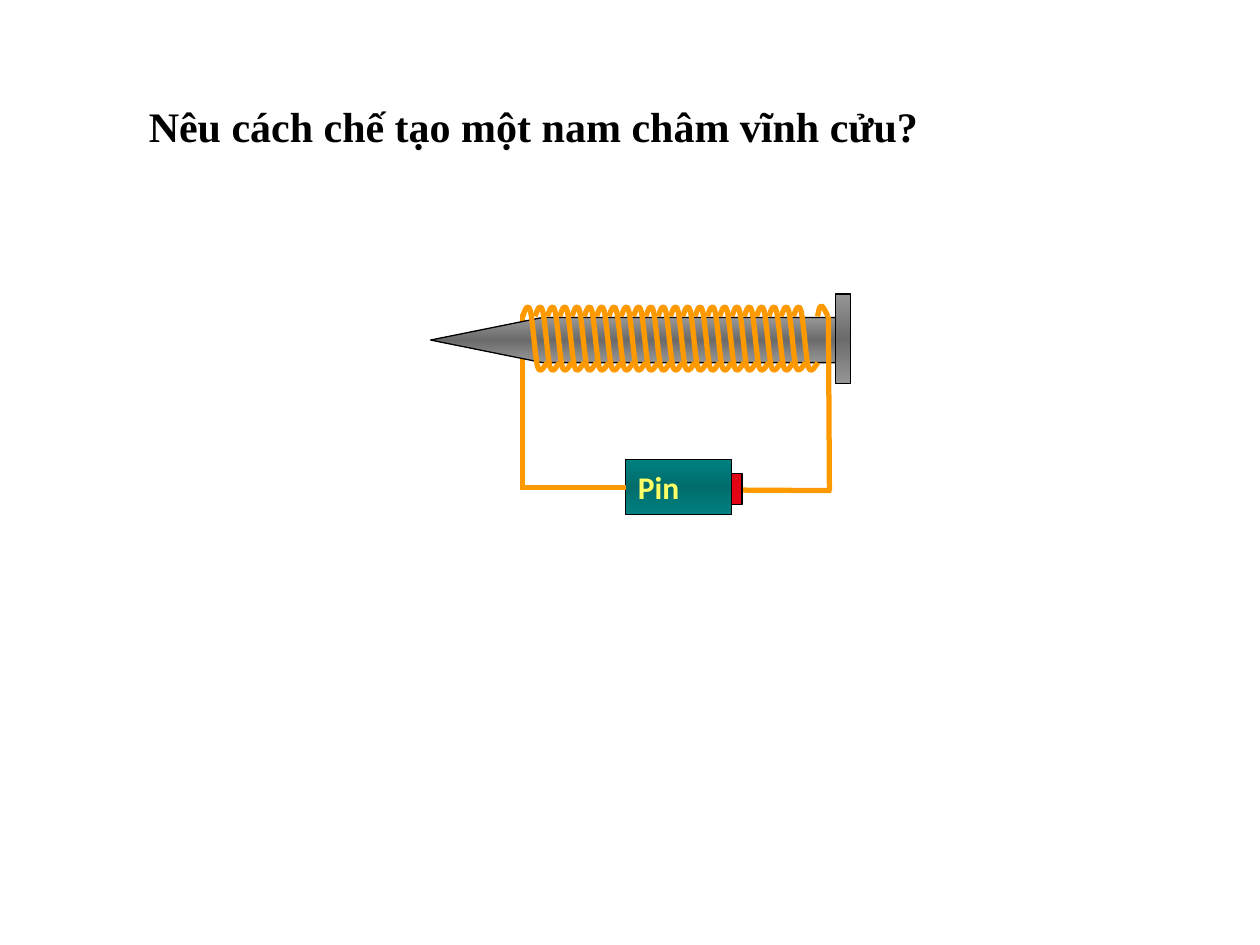
import copy

import lxml.etree
import pptx
import pptx.dml.color
import pptx.enum.shapes
import pptx.enum.text
import pptx.oxml.ns
import pptx.util

Cm = pptx.util.Cm
Pt = pptx.util.Pt
SHAPE = pptx.enum.shapes.MSO_SHAPE
qn = pptx.oxml.ns.qn


def rgb(color):
    return pptx.dml.color.RGBColor.from_string(color)


def bend(sp):
    """Turn each three line segments of a freeform into one cubic curve."""
    outline = sp._element.spPr.find(".//" + qn("a:path"))
    lines = outline.findall(qn("a:lnTo"))
    for i in range(0, len(lines), 3):
        curve = lxml.etree.SubElement(outline, qn("a:cubicBezTo"))
        for line in lines[i:i + 3]:
            curve.append(line[0])
            outline.remove(line)


def write(tf, text, font, size, color, bold=True, wrap=True,
          anchor=pptx.enum.text.MSO_ANCHOR.TOP):
    tf.word_wrap = wrap
    tf.vertical_anchor = anchor
    p = tf.paragraphs[0]
    p.alignment = pptx.enum.text.PP_ALIGN.LEFT
    r = p.add_run()
    r.text = text
    r.font.name = font
    r.font.size = Pt(size)
    r.font.bold = bold
    r.font.color.rgb = rgb(color)


class Drawing:
    """Holds the slide and the style; positions are in centimetres."""

    outline, wire = "000000", "FF9900"
    outline_width, wire_width = 0.75, 3

    def __init__(self, s):
        self.s = s

    def gradient(self, fill, color, shade):
        """Vertical gradient, shaded in the middle (thousandths of a percent)."""
        fill.gradient()
        fill.gradient_angle = 90
        for stop, position in zip(fill.gradient_stops, (0, 0.5)):
            stop.color.rgb = rgb(color)
            stop.position = position
        gs_list = fill._fill._gradFill.gsLst
        gs_list.append(copy.deepcopy(gs_list[0]))
        fill.gradient_stops[2].position = 1
        lxml.etree.SubElement(gs_list[1][0], qn("a:shade")).set(
            "val", str(shade))

    def shape(self, x, y, w, h, color, shade=None, kind=SHAPE.RECTANGLE):
        sp = self.s.shapes.add_shape(kind, Cm(x), Cm(y), Cm(w), Cm(h))
        sp.shadow.inherit = False
        if shade:
            self.gradient(sp.fill, color, shade)
        else:
            sp.fill.solid()
            sp.fill.fore_color.rgb = rgb(color)
        sp.line.color.rgb = rgb(self.outline)
        sp.line.width = Pt(self.outline_width)
        return sp

    def style_wire(self, sp):
        sp.line.color.rgb = rgb(self.wire)
        sp.line.width = Pt(self.wire_width)

    def straight_wire(self, x1, y1, x2, y2):
        sp = self.s.shapes.add_connector(
            pptx.enum.shapes.MSO_CONNECTOR.STRAIGHT,
            Cm(x1), Cm(y1), Cm(x2), Cm(y2))
        self.style_wire(sp)
        lxml.etree.SubElement(sp._element.spPr, qn("a:effectLst"))

    def curved_wire(self, x, *points):
        """A start and three points per curve, measured across from x."""
        points = [(Cm(x + dx), Cm(y)) for dx, y in points]
        fb = self.s.shapes.build_freeform(*points[0])
        fb.add_line_segments(points[1:], close=False)
        sp = fb.convert_to_shape()
        bend(sp)
        sp.shadow.inherit = False
        sp.fill.background()
        self.style_wire(sp)

    def text(self, x, y, w, h, text, **fmt):
        sp = self.s.shapes.add_textbox(Cm(x), Cm(y), Cm(w), Cm(h))
        write(sp.text_frame, text, **fmt)


def main():
    prs = pptx.Presentation()
    prs.slide_width, prs.slide_height = Cm(25.4), Cm(19.05)
    d = Drawing(prs.slides.add_slide(prs.slide_layouts[6]))

    battery = d.shape(12.61, 9.26, 2.14, 1.12, "008080", 69804)
    write(battery.text_frame, "Pin", font="Calibri", size=18, color="FFFF66",
          wrap=False, anchor=pptx.enum.text.MSO_ANCHOR.MIDDLE)
    d.shape(14.75, 9.54, 0.21, 0.63, "E20414")

    d.straight_wire(10.54, 6.32, 10.54, 9.88)
    steel = ("969696", 46275)
    nail = d.shape(8.68, 6.4, 8.2, 0.91, *steel, kind=SHAPE.PENTAGON)
    nail.adjustments[0] = 2.48
    nail.rotation = 180
    d.shape(16.84, 5.93, 0.31, 1.81, *steel)

    turns, coil_left, coil_top, pitch = 23, 10.54, 6.38, 0.248
    for i in range(turns):
        d.curved_wire(coil_left + i * pitch, (0, coil_top),
                      (0.05, 6.23), (0.1, 6.1), (0.15, 6.26),
                      (0.2, 6.43), (0.25, 7.22), (0.3, 7.4),
                      (0.36, 7.57), (0.46, 7.34), (0.49, 7.31))
    d.curved_wire(16.48, (0, coil_top),
                  (0.03, 6.27), (0.03, 6.17), (0.08, 6.17),
                  (0.11, 6.17), (0.16, 6.27), (0.21, coil_top))

    d.straight_wire(10.49, 9.83, 12.61, 9.83)
    d.straight_wire(16.7, coil_top, 16.72, 9.89)
    d.straight_wire(14.98, 9.88, 16.76, 9.89)

    d.text(2.75, 1.9, 19.89, 1.28, "Nêu cách chế tạo một nam châm vĩnh cửu?",
           font="Times New Roman", size=24, color="000000")
    prs.save("out.pptx")


if __name__ == "__main__":
    main()
